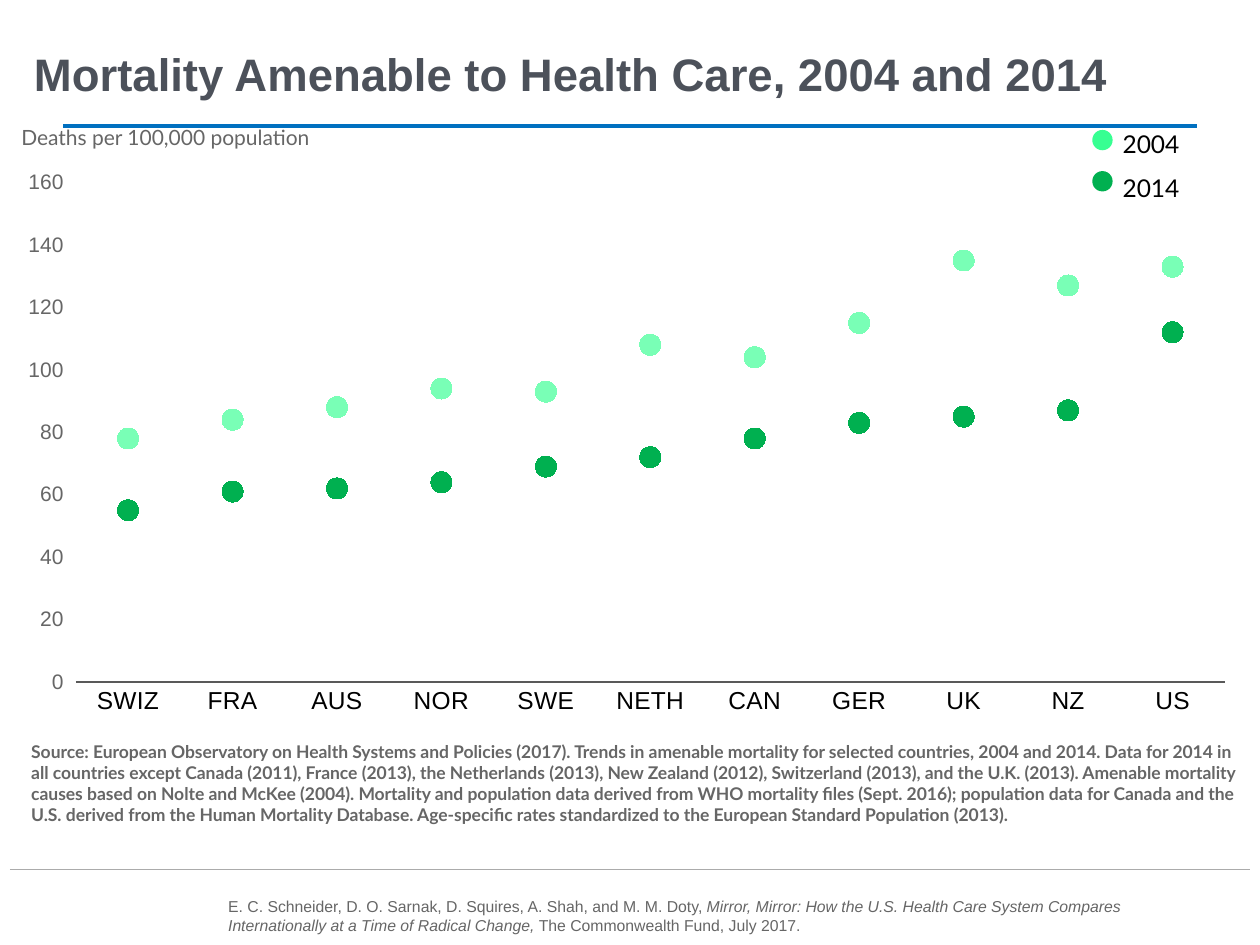
from collections import namedtuple

from lxml.etree import SubElement
from pptx import Presentation
from pptx.chart.data import CategoryChartData
from pptx.dml.color import RGBColor
from pptx.enum.chart import XL_CHART_TYPE, XL_MARKER_STYLE, XL_TICK_MARK
from pptx.enum.shapes import MSO_CONNECTOR, MSO_SHAPE
from pptx.enum.text import MSO_ANCHOR, MSO_AUTO_SIZE, PP_ALIGN
from pptx.oxml.ns import qn
from pptx.util import Cm, Pt

BLACK = RGBColor(0x00, 0x00, 0x00)
GREY = RGBColor(0x66, 0x66, 0x66)
TITLE_GREY = RGBColor(0x4C, 0x51, 0x5A)
AXIS_GREY = RGBColor(0x59, 0x59, 0x59)
RULE_GREY = RGBColor(0xAB, 0xAB, 0xAB)
RULE_BLUE = RGBColor(0x00, 0x70, 0xC0)
MINT = RGBColor(0x79, 0xFF, 0xB6)
BRIGHT_MINT = RGBColor(0x37, 0xFF, 0x92)
GREEN = RGBColor(0x00, 0xB0, 0x50)

COUNTRIES = ["SWIZ", "FRA", "AUS", "NOR", "SWE", "NETH", "CAN", "GER", "UK", "NZ", "US"]
DEATHS = {
    "2004": [78, 84, 88, 94, 93, 108, 104, 115, 135, 127, 133],
    "2014": [55, 61, 62, 64, 69, 72, 78, 83, 85, 87, 112],
}
MARKER_COLOURS = [MINT, GREEN]
LEGEND_COLOURS = [BRIGHT_MINT, GREEN]
PLOT_AREA = {"x": 0.051, "y": 0.045, "w": 0.945, "h": 0.811}

SOURCE = (
    "Source: European Observatory on Health Systems and Policies (2017). Trends in amenable "
    "mortality for selected countries, 2004 and 2014. Data for 2014 in all countries except "
    "Canada (2011), France (2013), the Netherlands (2013), New Zealand (2012), Switzerland "
    "(2013), and the U.K. (2013). Amenable mortality causes based on Nolte and McKee (2004). "
    "Mortality and population data derived from WHO mortality files (Sept. 2016); population "
    "data for Canada and the U.S. derived from the Human Mortality Database. Age-specific rates "
    "standardized to the European Standard Population (2013)."
)
CITATION = [
    ("E. C. Schneider, D. O. Sarnak, D. Squires, A. Shah, and M. M. Doty, ", False),
    ("Mirror, Mirror: How the U.S. Health Care System Compares Internationally "
     "at a Time of Radical Change, ", True),
    ("The Commonwealth Fund, July 2017.", False),
]

# Lengths in centimetres
Box = namedtuple("Box", "left top width height")


def lengths(box):
    return [Cm(value) for value in box]


def style_font(font, name, size, colour, bold=False):
    font.name = name
    font.size = Pt(size)
    font.color.rgb = colour
    font.bold = bold


def add_text(page, box, inset=0, anchor=MSO_ANCHOR.TOP):
    """Add an empty wrapping text box and return its text frame."""
    frame = page.shapes.add_textbox(*lengths(box)).text_frame
    frame.word_wrap = True
    frame.vertical_anchor = anchor
    frame.margin_left = frame.margin_right = Cm(inset)
    frame.margin_top = frame.margin_bottom = Cm(inset / 2)
    return frame


def add_rule(page, left, right, top, colour, weight):
    rule = page.shapes.add_connector(
        MSO_CONNECTOR.STRAIGHT, Cm(left), Cm(top), Cm(right), Cm(top))
    rule.line.color.rgb = colour
    rule.line.width = Pt(weight)
    SubElement(rule._element.spPr, qn("a:effectLst"))


def place_title(page, box):
    title = page.shapes.title
    title.left, title.top, title.width, title.height = lengths(box)
    frame = title.text_frame
    frame.text = "Mortality Amenable to Health Care, 2004 and 2014"
    frame.vertical_anchor = MSO_ANCHOR.TOP
    frame.auto_size = MSO_AUTO_SIZE.NONE
    para = frame.paragraphs[0]
    para.alignment = PP_ALIGN.LEFT
    style_font(para.runs[0].font, "Arial", 26, TITLE_GREY, bold=True)
    add_rule(page, box.left + 0.84, box.left + 23.7, box.top + 1.73, RULE_BLUE, 2)


def fix_plot_area(chart):
    """Pin the inner plot area to fixed fractions of the chart."""
    plot_area = chart._chartSpace.chart.plotArea
    layout = plot_area.find(qn("c:layout"))
    if layout is None:
        layout = plot_area.makeelement(qn("c:layout"), {})
        plot_area.insert(0, layout)
    manual = SubElement(layout, qn("c:manualLayout"))
    settings = {"layoutTarget": "inner", "xMode": "edge", "yMode": "edge", **PLOT_AREA}
    for name, value in settings.items():
        SubElement(manual, qn(f"c:{name}"), val=str(value))


def add_mortality_chart(page, box):
    data = CategoryChartData(number_format="0")
    data.categories = COUNTRIES
    for year, values in DEATHS.items():
        data.add_series(year, values)
    chart = page.shapes.add_chart(XL_CHART_TYPE.LINE_MARKERS, *lengths(box), data).chart
    chart.has_title = False
    chart.has_legend = False
    style_font(chart.font, "Arial", 18, BLACK)
    fix_plot_area(chart)

    countries = chart.category_axis
    countries.major_tick_mark = XL_TICK_MARK.NONE
    countries.format.line.color.rgb = AXIS_GREY
    countries.format.line.width = Pt(0.75)
    style_font(countries.tick_labels.font, "Arial", 14, BLACK)

    deaths = chart.value_axis
    deaths.minimum_scale, deaths.maximum_scale, deaths.major_unit = 0, 160, 20
    deaths.has_major_gridlines = False
    deaths.format.line.fill.background()
    deaths.tick_labels.number_format = "0"
    deaths.tick_labels.number_format_is_linked = False
    style_font(deaths.tick_labels.font, "Arial", 12, GREY)

    plot = chart.plots[0]
    plot.vary_by_categories = False
    for series, colour in zip(plot.series, MARKER_COLOURS):
        series.smooth = False
        series.format.line.fill.background()
        marker = series.marker
        marker.style = XL_MARKER_STYLE.CIRCLE
        marker.size = 12
        marker.format.fill.solid()
        marker.format.fill.fore_color.rgb = colour
        marker.format.line.fill.background()


def add_legend(page, box):
    dot_size, dot_top, dot_step, label_left = 0.41, 0.31, 0.83, 0.61
    for index, colour in enumerate(LEGEND_COLOURS):
        dot_box = Box(box.left, box.top + dot_top + index * dot_step, dot_size, dot_size)
        dot = page.shapes.add_shape(MSO_SHAPE.OVAL, *lengths(dot_box))
        dot.shadow.inherit = False
        dot.fill.solid()
        dot.fill.fore_color.rgb = colour
        dot.line.fill.background()
    frame = add_text(page, Box(box.left + label_left, box.top,
                               box.width - label_left, box.height))
    frame.text = "\n".join(DEATHS)
    for para in frame.paragraphs:
        para.line_spacing = 1.5
        style_font(para.runs[0].font, "Lato", 14, BLACK)


def add_axis_caption(page, box):
    frame = add_text(page, box)
    frame.text = "Deaths per 100,000 population"
    style_font(frame.paragraphs[0].runs[0].font, "Lato", 12, GREY)


def add_source(page, box):
    frame = add_text(page, box, inset=0.25, anchor=MSO_ANCHOR.BOTTOM)
    frame.text = SOURCE
    style_font(frame.paragraphs[0].runs[0].font, "Lato", 10, GREY, bold=True)


def add_footer(page, box):
    add_rule(page, box.left, box.left + box.width, box.top, RULE_GREY, 0.75)
    frame = add_text(page, Box(box.left + 4.4, box.top + 0.17, 18.8, box.height - 0.17),
                     anchor=MSO_ANCHOR.BOTTOM)
    para = frame.paragraphs[0]
    for text, italic in CITATION:
        span = para.add_run()
        span.text = text
        style_font(span.font, "Arial", 9, GREY)
        span.font.italic = italic


def main():
    deck = Presentation()
    deck.slide_width, deck.slide_height = Cm(25.4), Cm(19.05)
    page = deck.slides.add_slide(deck.slide_layouts[5])
    place_title(page, Box(0.43, 0.81, 24.56, 2.64))
    add_footer(page, Box(0.2, 17.53, 25, 1.31))
    add_source(page, Box(0.38, 15.24, 24.77, 1.52))
    add_mortality_chart(page, Box(0.28, 3.12, 24.51, 12.42))
    add_legend(page, Box(22.02, 2.31, 2.29, 1.68))
    add_axis_caption(page, Box(0.43, 2.51, 6.12, 0.51))
    deck.save("out.pptx")


if __name__ == "__main__":
    main()
